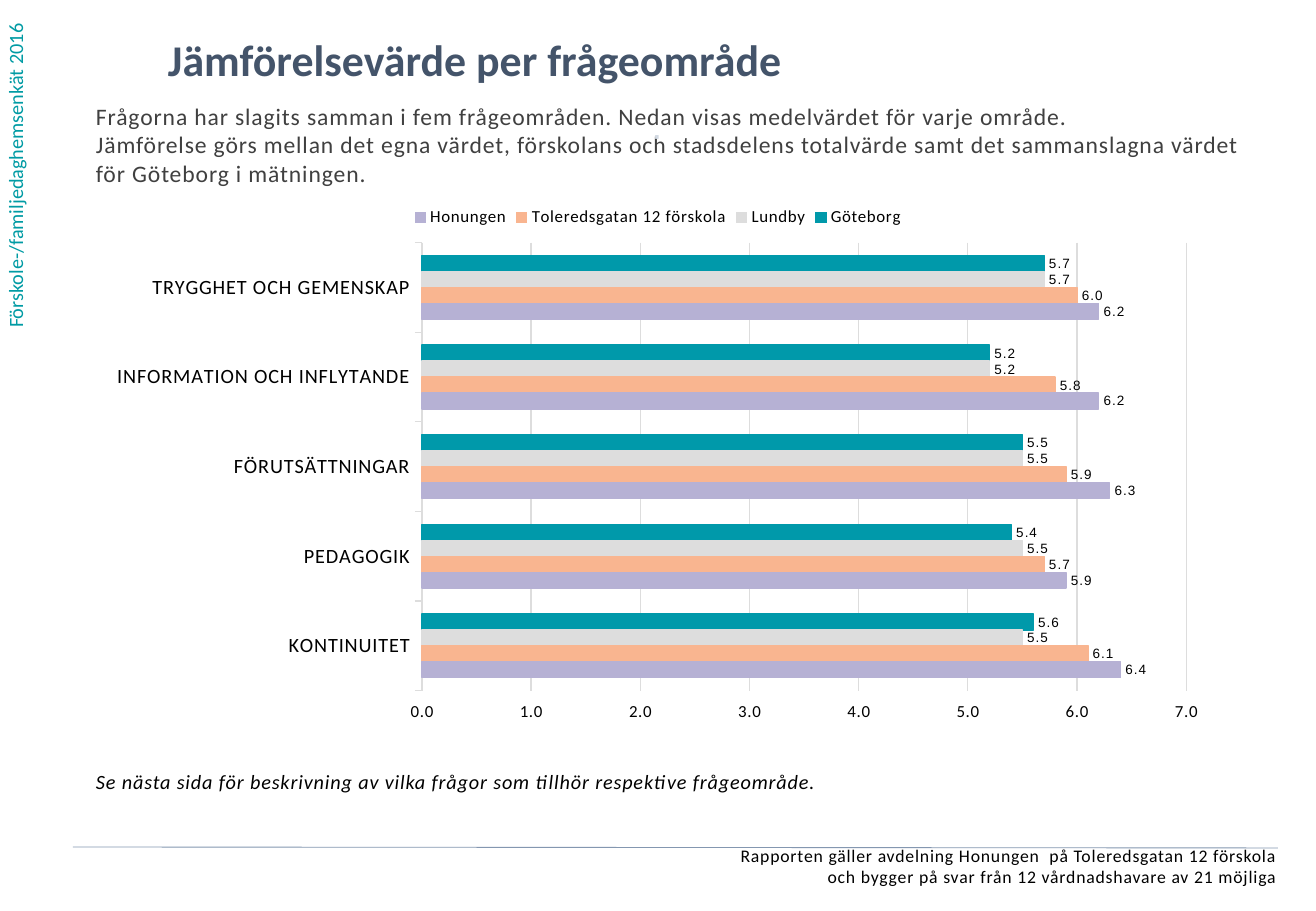
from lxml import etree
from pptx import Presentation
from pptx.chart.data import CategoryChartData as Data
from pptx.dml.color import RGBColor as Rgb
from pptx.enum.chart import XL_CHART_TYPE as Kind, XL_LABEL_POSITION as Spot
from pptx.enum.chart import XL_LEGEND_POSITION as Side, XL_TICK_MARK as Tick
from pptx.enum.chart import XL_TICK_LABEL_POSITION as Edge
from pptx.enum.shapes import MSO_CONNECTOR as Wire
from pptx.enum.text import MSO_ANCHOR as Anchor, PP_ALIGN as Align
from pptx.oxml.ns import qn
from pptx.util import Pt

SCALE = 7526
COLORS = {"teal": "009BA4", "title": "44546A", "body": "404040", "black": "000000",
          "dot": "D2D9E2", "rule": "8497B0", "grid": "DDDDDD"}
AREAS = ["TRYGGHET OCH GEMENSKAP", "INFORMATION OCH INFLYTANDE", "FÖRUTSÄTTNINGAR",
         "PEDAGOGIK", "KONTINUITET"]
SERIES = [("Göteborg", "0099AA", (5.7, 5.2, 5.5, 5.4, 5.6)),
          ("Lundby", "DDDDDD", (5.7, 5.2, 5.5, 5.5, 5.5)),
          ("Toleredsgatan 12 förskola", "F9B590", (6.0, 5.8, 5.9, 5.7, 6.1)),
          ("Honungen", "B6B1D4", (6.2, 6.2, 6.3, 5.9, 6.4))]
INTRO = ("Frågorna har slagits samman i fem frågeområden. Nedan visas medelvärdet för varje område.\n"
         "Jämförelse görs mellan det egna värdet, förskolans och stadsdelens totalvärde samt "
         "det sammanslagna värdet för Göteborg i mätningen.")
NOTE = "Se nästa sida för beskrivning av vilka frågor som tillhör respektive frågeområde."
FOOT = ("Rapporten gäller avdelning Honungen  på Toleredsgatan 12 förskola\n"
        "och bygger på svar från 12 vårdnadshavare av 21 möjliga")


def px(*nums):
    return [num * SCALE for num in nums]


def ink(name):
    return Rgb.from_string(COLORS[name])


def style(font, size, color="black", face="Calibri"):
    font.name, font.size = face, Pt(size)
    font.color.rgb = ink(color)


def write(shape, box, text, size, color="black", align=Align.LEFT,
          bold=False, italic=False, space=50):
    shape.left, shape.top, shape.width, shape.height = px(*box)
    frame = shape.text_frame
    frame.word_wrap = True
    frame.vertical_anchor = Anchor.TOP
    frame.margin_left = frame.margin_right = 0
    frame.margin_top = frame.margin_bottom = 0
    frame.text = text
    for para in frame.paragraphs:
        para.alignment = align
        for run in para.runs:
            style(run.font, size, color)
            run.font.bold, run.font.italic = bold, italic
            run._r.get_or_add_rPr().set("spc", str(space))
    return frame


def label(slide, box, text, size, **look):
    return write(slide.shapes.add_textbox(*px(*box)), box, text, size, **look)


def banner(slide, box):
    x, y, w, h = box
    write(slide.shapes.title, (x + 168, y + 33, 1013, 69),
          "Jämförelsevärde per frågeområde", 26, "title", bold=True, space=0)
    label(slide, (x + 96, y + 102, 1149, 90), INTRO, 14, color="body")
    label(slide, (x + 470, y + 124, 374, 47), "⋅", 12, color="dot",
          align=Align.CENTER, bold=True)


def margin(slide, box):
    frame = label(slide, box, "Förskole-/familjedaghemsenkät 2016", 12,
                  color="teal", space=0)
    frame._txBody.bodyPr.set("vert", "vert270")


def place(plot, **parts):
    for old in plot.findall(qn("c:layout")):
        plot.remove(old)
    layout = etree.Element(qn("c:layout"))
    manual = etree.SubElement(layout, qn("c:manualLayout"))
    for tag, val in parts.items():
        etree.SubElement(manual, qn("c:" + tag)).set("val", str(val))
    plot.insert(0, layout)


def graph(slide, box):
    data = Data(number_format="0.0")
    data.categories = AREAS
    for name, _, vals in SERIES:
        data.add_series(name, vals)
    chart = slide.shapes.add_chart(Kind.BAR_CLUSTERED, *px(*box), data).chart
    style(chart.font, 10)
    chart.has_title = False
    chart.has_legend = True
    legend = chart.legend
    legend.position, legend.include_in_layout = Side.TOP, False
    style(legend.font, 10)

    cats, vals = chart.category_axis, chart.value_axis
    cats.reverse_order = True
    cats.major_tick_mark = vals.major_tick_mark = Tick.OUTSIDE
    style(cats.tick_labels.font, 12)
    style(vals.tick_labels.font, 10)
    vals.minimum_scale, vals.maximum_scale, vals.major_unit = 0, 7, 1
    vals.tick_label_position = Edge.HIGH
    vals.tick_labels.number_format = "0.0"
    vals.tick_labels.number_format_is_linked = False
    vals.format.line.fill.background()
    vals.has_major_gridlines = True
    for line in (cats.format.line, vals.major_gridlines.format.line):
        line.color.rgb, line.width = ink("grid"), Pt(0.75)

    plot = chart.plots[0]
    plot.gap_width, plot.overlap, plot.vary_by_categories = 162, 0, False
    for bar, (_, color, _) in zip(plot.series, SERIES):
        tint = Rgb.from_string(color)
        bar.format.fill.solid()
        bar.format.fill.fore_color.rgb = bar.format.line.color.rgb = tint
        bar.format.line.width = Pt(0.75)
        tags = bar.data_labels
        tags.show_value, tags.position = True, Spot.OUTSIDE_END
        tags.number_format, tags.number_format_is_linked = "0.0", False
        style(tags.font, 8, face="Arial")

    root = chart._chartSpace
    place(root.find(".//" + qn("c:plotArea")), layoutTarget="inner", xMode="edge",
          yMode="edge", x=0.29, y=0.09, w=0.68, h=0.83)
    for item in root.iter(qn("a:defRPr")):
        item.set("spc", "50")


def footer(slide, box):
    x, y, w, h = box
    rule = slide.shapes.add_connector(Wire.STRAIGHT, *px(x, y, x + w, y + 1))
    rule.line.color.rgb, rule.line.width = ink("rule"), Pt(0.5)
    etree.SubElement(rule._element.spPr, qn("a:effectLst"))
    label(slide, (x, y - 2, w - 1, h), FOOT, 10.5, align=Align.RIGHT)


def main():
    deck = Presentation()
    deck.slide_width, deck.slide_height = px(1316, 911)
    slide = deck.slides.add_slide(deck.slide_layouts[5])
    margin(slide, (3, 0, 40, 328))
    banner(slide, (0, 0, 1316, 194))
    graph(slide, (96, 194, 1124, 540))
    label(slide, (96, 769, 1124, 30), NOTE, 12, italic=True)
    footer(slide, (73, 847, 1205, 44))
    deck.save("out.pptx")


if __name__ == "__main__":
    main()
